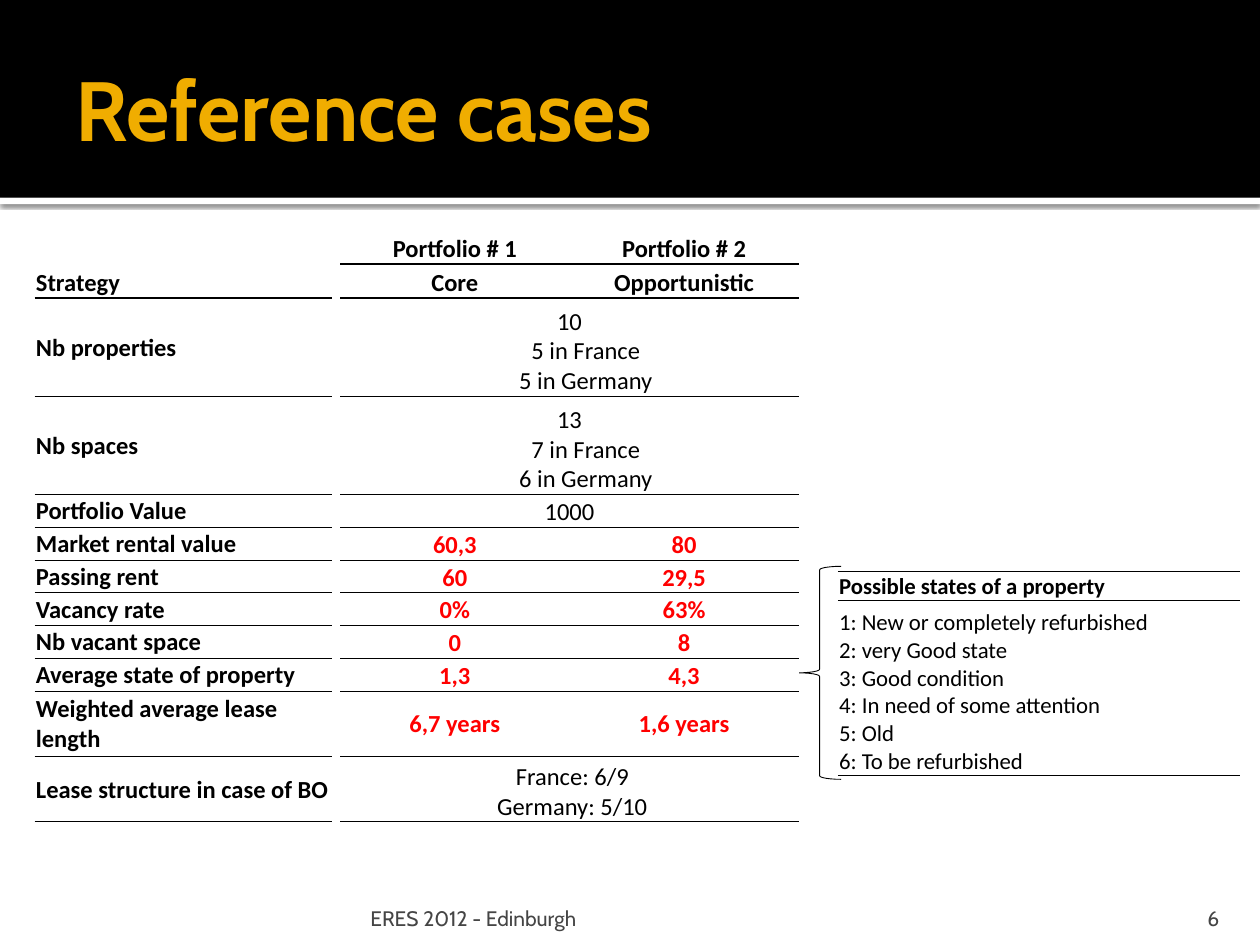
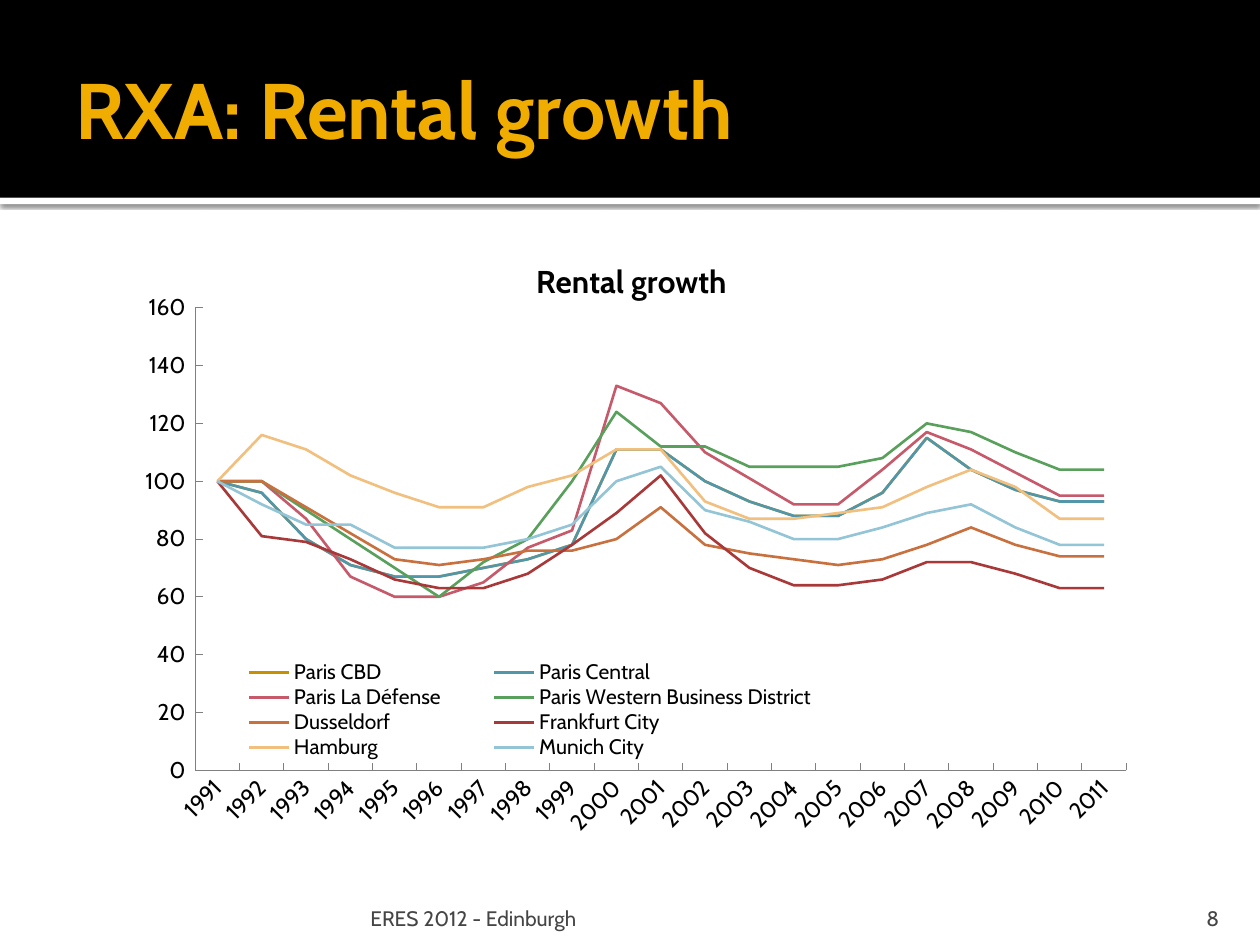
import dataclasses

import lxml.etree
import pptx
import pptx.chart.data
import pptx.dml.color
import pptx.enum.chart
import pptx.enum.shapes
import pptx.enum.text
import pptx.oxml.ns
import pptx.util

qn = pptx.oxml.ns.qn
ALIGN = pptx.enum.text.PP_ALIGN
ANCHOR = pptx.enum.text.MSO_ANCHOR
SHAPE = pptx.enum.shapes.MSO_SHAPE
COLUMNS, ROWS = 100, 75
CELL = pptx.util.Inches(0.1)


@dataclasses.dataclass(frozen=True)
class Theme:
    black: str = "000000"
    white: str = "FFFFFF"
    gold: str = "F0AD00"
    red: str = "FF0000"
    footer: str = "454545"
    axis: str = "808080"
    heading_font: str = "Cabin"
    table_font: str = "Calibri"
    footer_size: float = 12
    table_size: float = 14
    states_size: float = 13
    axis_size: float = 13
    legend_size: float = 12
    chart_title_size: float = 18
    thin: float = 0.5
    thick: float = 1
    series_line: float = 1.5


THEME = Theme()


@dataclasses.dataclass(frozen=True)
class Box:
    left: float
    top: float
    width: float
    height: float

    def inner(self, left, top, width, height):
        return Box(self.left + left, self.top + top, width, height)

    def emu(self):
        return [round(v * CELL) for v in (self.left, self.top, self.width, self.height)]


@dataclasses.dataclass(frozen=True)
class CaseRow:
    label: str
    values: tuple
    height: float = 2.6
    anchor: ANCHOR = ANCHOR.BOTTOM
    indents: tuple = (0, 0)


PAGE = Box(0, 0, COLUMNS, ROWS)
TABLE_INSETS = (0.1, 0.1, 0.1, 0)

CASES = [
    CaseRow("", ("Portfolio # 1", "Portfolio # 2"), 3.1),
    CaseRow("Strategy", ("Core", "Opportunistic"), 2.7),
    CaseRow("Nb properties", ("10\n5 in France\n5 in Germany",), 7.8, indents=(0, 2.6)),
    CaseRow("Nb spaces", ("13\n7 in France\n6 in Germany",), 7.8, indents=(0, 2.6)),
    CaseRow("Portfolio Value", ("1000",)),
    CaseRow("Market rental value", ("60,3", "80")),
    CaseRow("Passing rent", ("60", "29,5")),
    CaseRow("Vacancy rate", ("0%", "63%")),
    CaseRow("Nb vacant space", ("0", "8")),
    CaseRow("Average state of property", ("1,3", "4,3")),
    CaseRow("Weighted average lease length", ("6,7 years", "1,6 years"), 5.2, ANCHOR.MIDDLE),
    CaseRow("Lease structure in case of BO", ("France: 6/9\nGermany: 5/10",), 5.2, indents=(0.45, 0.45)),
]

STATES = ["New or completely refurbished", "very Good state", "Good condition",
          "In need of some attention", "Old", "To be refurbished"]

PARIS_CORE = (100, 96, 80, 71, 67, 67, 70, 73, 78, 111, 111, 100, 93, 88, 88, 96, 115, 104, 97, 93, 93)
RENTS = [
    ("Paris CBD", "C79000", PARIS_CORE),
    ("Paris Central", "5197A9", PARIS_CORE),
    ("Paris La Défense", "C6596A",
     (100, 100, 87, 67, 60, 60, 65, 77, 83, 133, 127, 110, 101, 92, 92, 104, 117, 111, 103, 95, 95)),
    ("Paris Western Business District", "58A05B",
     (100, 100, 90, 80, 70, 60, 72, 80, 100, 124, 112, 112, 105, 105, 105, 108, 120, 117, 110, 104, 104)),
    ("Dusseldorf", "C8713F",
     (100, 100, 91, 82, 73, 71, 73, 76, 76, 80, 91, 78, 75, 73, 71, 73, 78, 84, 78, 74, 74)),
    ("Frankfurt City", "A93939",
     (100, 81, 79, 73, 66, 63, 63, 68, 78, 89, 102, 82, 70, 64, 64, 66, 72, 72, 68, 63, 63)),
    ("Hamburg", "F1BF7E",
     (100, 116, 111, 102, 96, 91, 91, 98, 102, 111, 111, 93, 87, 87, 89, 91, 98, 104, 98, 87, 87)),
    ("Munich City", "93C5D6",
     (100, 92, 85, 85, 77, 77, 77, 80, 85, 100, 105, 90, 86, 80, 80, 84, 89, 92, 84, 78, 78)),
]


def rgb(color):
    return pptx.dml.color.RGBColor.from_string(color)


def style_font(font, size, name=THEME.heading_font, color=THEME.black, bold=False):
    font.size, font.name, font.bold = pptx.util.Pt(size), name, bold
    font.color.rgb = rgb(color)


def write(frame, text, size, align=ALIGN.LEFT, indents=(0, 0), **font_format):
    frame.text = text
    for position, paragraph in enumerate(frame.paragraphs):
        paragraph.alignment = align
        indent = indents[min(position, 1)]
        if indent:
            paragraph._p.get_or_add_pPr().set("marL", str(round(indent * CELL)))
        for run in paragraph.runs:
            style_font(run.font, size, **font_format)
        if not paragraph.runs:
            paragraph._p.get_or_add_endParaRPr().set("sz", str(size * 100))


def seat(holder, anchor, insets):
    holder.vertical_anchor = anchor
    for side, inset in zip(("left", "top", "right", "bottom"), insets):
        setattr(holder, f"margin_{side}", round(inset * CELL))


def add_text(slide, box, text, anchor, insets, size, **text_format):
    frame = slide.shapes.add_textbox(*box.emu()).text_frame
    frame.word_wrap = True
    seat(frame, anchor, insets)
    write(frame, text, size, **text_format)


def add_preset(slide, box, preset, fill=None, line=None):
    shape = slide.shapes.add_shape(preset, *box.emu())
    shape.shadow.inherit = False
    if fill:
        shape.fill.solid()
        shape.fill.fore_color.rgb = rgb(fill)
    else:
        shape.fill.background()
    if line:
        shape.line.color.rgb = rgb(THEME.black)
        shape.line.width = pptx.util.Pt(line)
    else:
        shape.line.fill.background()
    return shape


def add_child(parent, tag, **attributes):
    return lxml.etree.SubElement(parent, qn(tag), {k: str(v) for k, v in attributes.items()})


def title_band(slide, box, title, size):
    strip = add_preset(slide, box.inner(0, box.height, box.width, 0.5), SHAPE.RECTANGLE, THEME.white)
    effects = strip._element.spPr.find(qn("a:effectLst"))
    shadow = add_child(effects, "a:outerShdw", blurRad=pptx.util.Pt(2.5), dist=pptx.util.Pt(0.8),
                       dir=5400000, algn="t", rotWithShape=0)
    add_child(add_child(shadow, "a:srgbClr", val=THEME.black), "a:alpha", val=60000)
    add_preset(slide, box, SHAPE.RECTANGLE, THEME.black)
    add_text(slide, box.inner(5, 1.7, box.width - 10, 13.7), title, ANCHOR.MIDDLE,
             (1, 0.5, 0.5, 0.5), size, color=THEME.gold, bold=True)


def footer(slide, box, number):
    add_text(slide, box.inner(28.9, 0, 60.2, box.height), "ERES 2012 - Edinburgh", ANCHOR.BOTTOM,
             (0.5, 0.5, 0.5, 0), THEME.footer_size, color=THEME.footer)
    add_text(slide, box.inner(89.75, 0, 8, box.height), str(number), ANCHOR.BOTTOM,
             (1, 0.5, 1, 0), THEME.footer_size, color=THEME.footer, align=ALIGN.RIGHT)


def framed_slide(deck, title, size, number):
    slide = deck.slides.add_slide(deck.slide_layouts[6])
    title_band(slide, PAGE.inner(0, 0, COLUMNS, 15.7), title, size)
    footer(slide, PAGE.inner(0, 70.85, COLUMNS, 3), number)
    return slide


def add_grid(slide, box, widths, heights):
    table = slide.shapes.add_table(len(heights), len(widths), *box.emu()).table
    table.first_row = table.horz_banding = False
    for column, width in zip(table.columns, widths):
        column.width = round(width * CELL)
    for row, height in zip(table.rows, heights):
        row.height = round(height * CELL)
    return table


def fill_cell(cell, text, size, anchor=ANCHOR.BOTTOM, top=0, bottom=0, **text_format):
    seat(cell, anchor, TABLE_INSETS)
    write(cell.text_frame, text, size, name=THEME.table_font, **text_format)
    properties = cell._tc.get_or_add_tcPr()
    for side, weight in (("L", 0), ("R", 0), ("T", top), ("B", bottom)):
        edge = add_child(properties, f"a:ln{side}", w=pptx.util.Pt(weight))
        if weight:
            add_child(add_child(edge, "a:solidFill"), "a:srgbClr", val=THEME.black)
        else:
            add_child(edge, "a:noFill")
    cell.fill.solid()
    cell.fill.fore_color.rgb = rgb(THEME.white)


def case_table(slide, box):
    table = add_grid(slide, box, (23.6, 0.65, 18.2, 18.2), [case.height for case in CASES])
    weights = [THEME.thick] * 2 + [THEME.thin] * (len(CASES) - 2)
    for r, case in enumerate(CASES):
        heading, paired = r < 2, len(case.values) == 2
        top = weights[r - 1] if r else 0
        fill_cell(table.cell(r, 0), case.label, THEME.table_size, bold=True,
                  anchor=ANCHOR.BOTTOM if heading else ANCHOR.MIDDLE,
                  top=top if r > 1 else 0, bottom=weights[r] if r else 0)
        fill_cell(table.cell(r, 1), "", THEME.table_size)
        for c, value in enumerate(case.values if paired else case.values + ("",), 2):
            fill_cell(table.cell(r, c), value, THEME.table_size, case.anchor, top, weights[r],
                      align=ALIGN.CENTER, indents=case.indents, bold=paired,
                      color=THEME.red if paired and not heading else THEME.black)
        if not paired:
            table.cell(r, 2).merge(table.cell(r, 3))


def state_key(slide, box):
    add_preset(slide, box.inner(0, 0, 3.4, box.height), SHAPE.LEFT_BRACE, line=THEME.thin)
    table = add_grid(slide, box.inner(3.15, 0.4, 31.9, 16.2), (31.9,), (2.3, 13.9))
    fill_cell(table.cell(0, 0), "Possible states of a property", THEME.states_size,
              top=THEME.thin, bottom=THEME.thick, bold=True)
    listing = "\n".join(f"{rank}: {state}" for rank, state in enumerate(STATES, 1))
    fill_cell(table.cell(1, 0), listing, THEME.states_size, top=THEME.thick, bottom=THEME.thin)


def place(element, index, chart_box, x, y, w=None, h=None):
    layout = element.find(qn("c:layout"))
    if layout is not None:
        element.remove(layout)
    layout = lxml.etree.Element(qn("c:layout"))
    element.insert(index, layout)
    manual = add_child(layout, "c:manualLayout")
    if element.tag == qn("c:plotArea"):
        add_child(manual, "c:layoutTarget", val="inner")
    for axis in ("x", "y"):
        add_child(manual, f"c:{axis}Mode", val="edge")
    extents = (("x", x, chart_box.width), ("y", y, chart_box.height),
               ("w", w, chart_box.width), ("h", h, chart_box.height))
    for name, length, whole in extents:
        if length is not None:
            add_child(manual, f"c:{name}", val=length / whole)


def rent_chart(slide, box):
    data = pptx.chart.data.CategoryChartData(number_format="#,##0")
    data.categories = [str(year) for year in range(1991, 2012)]
    for city, _, rents in RENTS:
        data.add_series(city, rents)
    chart = slide.shapes.add_chart(pptx.enum.chart.XL_CHART_TYPE.LINE, *box.emu(), data).chart
    style_font(chart.font, 10)
    chart.plots[0].vary_by_categories = False
    for line, (_, color, _) in zip(chart.plots[0].series, RENTS):
        line.smooth = False
        line.format.line.color.rgb = rgb(color)
        line.format.line.width = pptx.util.Pt(THEME.series_line)

    for axis in (chart.category_axis, chart.value_axis):
        axis.has_major_gridlines = False
        axis.major_tick_mark = pptx.enum.chart.XL_TICK_MARK.INSIDE
        axis.minor_tick_mark = pptx.enum.chart.XL_TICK_MARK.NONE
        axis.format.line.color.rgb = rgb(THEME.axis)
        axis.format.line.width = pptx.util.Pt(THEME.thin)
        style_font(axis.tick_labels.font, THEME.axis_size)
    years = chart.category_axis._element.find(qn("c:txPr"))
    years.find(qn("a:bodyPr")).set("rot", "-2700000")
    scale = chart.value_axis
    scale.minimum_scale, scale.maximum_scale, scale.major_unit = 0, 160, 20
    scale.tick_labels.number_format = r"#,##0_ ;[Red]\-#,##0\ "
    scale.tick_labels.number_format_is_linked = False

    chart.has_title = chart.has_legend = True
    write(chart.chart_title.text_frame, "Rental growth", THEME.chart_title_size,
          align=ALIGN.CENTER, bold=True)
    chart.legend.position = pptx.enum.chart.XL_LEGEND_POSITION.RIGHT
    chart.legend.include_in_layout = False
    style_font(chart.legend.font, THEME.legend_size)
    place(chart.chart_title._element, 1, box, x=33, y=1.55)
    place(chart.legend._element, 1, box, x=7, y=33.8, w=52, h=7.9)
    place(chart._chartSpace.chart.plotArea, 0, box, x=6.4, y=5.83, w=73.9, h=36.72)


def main():
    deck = pptx.Presentation()
    deck.slide_width, deck.slide_height = COLUMNS * CELL, ROWS * CELL
    cases = framed_slide(deck, "Reference cases", 48, 6)
    state_key(cases, PAGE.inner(63.35, 44.95, 35, 16.9))
    case_table(cases, PAGE.inner(2.75, 17.85, 60.65, 47.4))
    growth = framed_slide(deck, "RXA: Rental growth", 45, 8)
    rent_chart(growth, PAGE.inner(9.1, 18.6, 82.1, 50.3))
    deck.save("out.pptx")


if __name__ == "__main__":
    main()
